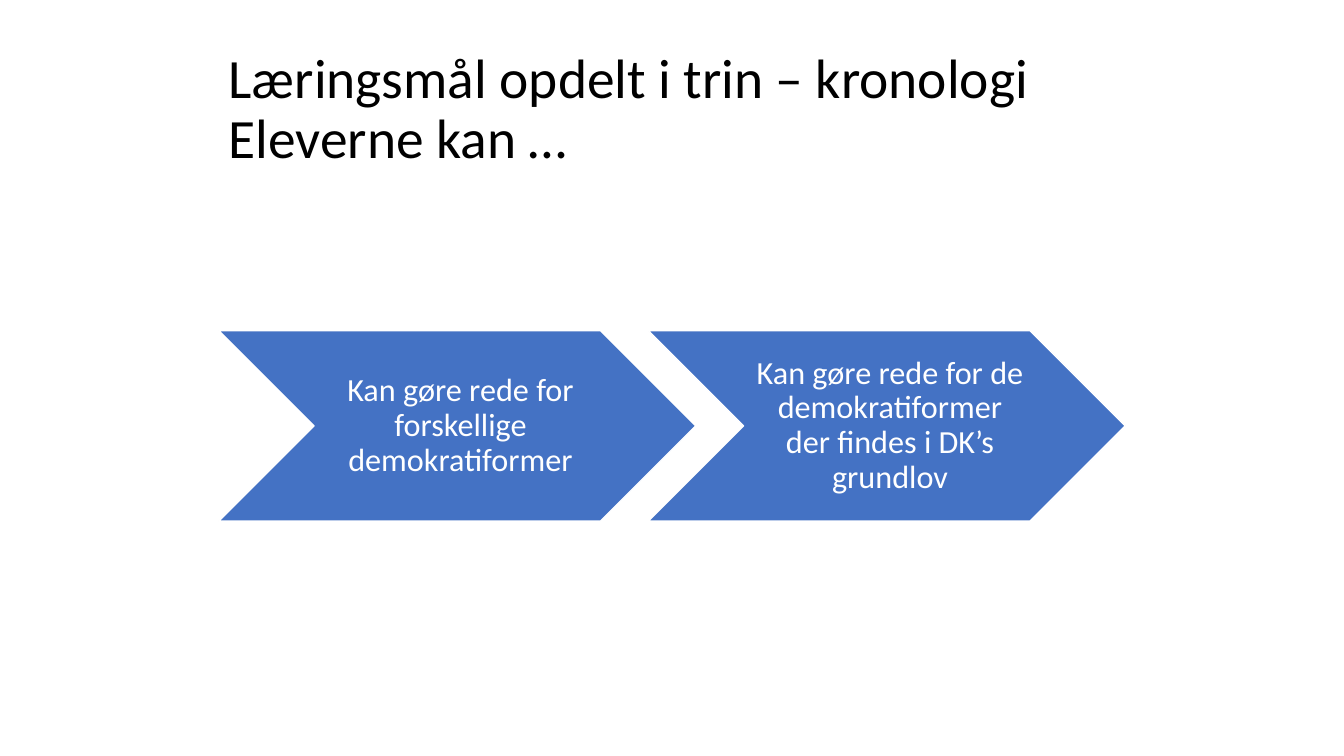
from pptx import Presentation
from pptx.dml.color import RGBColor
from pptx.enum.shapes import MSO_SHAPE
from pptx.enum.text import MSO_ANCHOR, PP_ALIGN
from pptx.util import Inches, Pt

TITLE = "Læringsmål opdelt i trin – kronologi\nEleverne kan …"
STEPS = [
    "Kan gøre rede for forskellige demokratiformer",
    "Kan gøre rede for de demokratiformer der findes i DK’s grundlov",
]

BLACK = RGBColor(0x00, 0x00, 0x00)
WHITE = RGBColor(0xFF, 0xFF, 0xFF)
BLUE = RGBColor(0x44, 0x72, 0xC4)
FONT = "Calibri"

LEFT = 2.17
STEP_TOP, STEP_W, STEP_H = 3.28, 4.73, 1.89
STEP_PITCH = 4.26


def set_text(sp, text, *, size, color, align=PP_ALIGN.LEFT,
             insets=(0.1, 0.05, 0.1, 0.05)):
    tf = sp.text_frame
    tf.word_wrap = True
    tf.vertical_anchor = MSO_ANCHOR.MIDDLE
    (tf.margin_left, tf.margin_top,
     tf.margin_right, tf.margin_bottom) = map(Inches, insets)
    p = tf.paragraphs[0]
    p.text = text
    p.alignment = align
    p.line_spacing = 0.9
    for r in p.runs:
        r.font.name = FONT
        r.font.size = Pt(size)
        r.font.color.rgb = color


prs = Presentation()
prs.slide_width = Inches(13.33)
prs.slide_height = Inches(7.5)
s = prs.slides.add_slide(prs.slide_layouts[6])

title = s.shapes.add_textbox(Inches(LEFT), Inches(0.44), Inches(8.76), Inches(1.31))
set_text(title, TITLE, size=39.6, color=BLACK)

for i, step in enumerate(STEPS):
    sp = s.shapes.add_shape(
        MSO_SHAPE.CHEVRON, Inches(LEFT + i * STEP_PITCH), Inches(STEP_TOP),
        Inches(STEP_W), Inches(STEP_H))
    sp.shadow.inherit = False
    sp.fill.solid()
    sp.fill.fore_color.rgb = BLUE
    sp.line.color.rgb = WHITE
    sp.line.width = Pt(1)
    set_text(sp, step, size=23, color=WHITE, align=PP_ALIGN.CENTER,
             insets=(0.1, 0.03, 0.03, 0.03))

prs.save("out.pptx")
